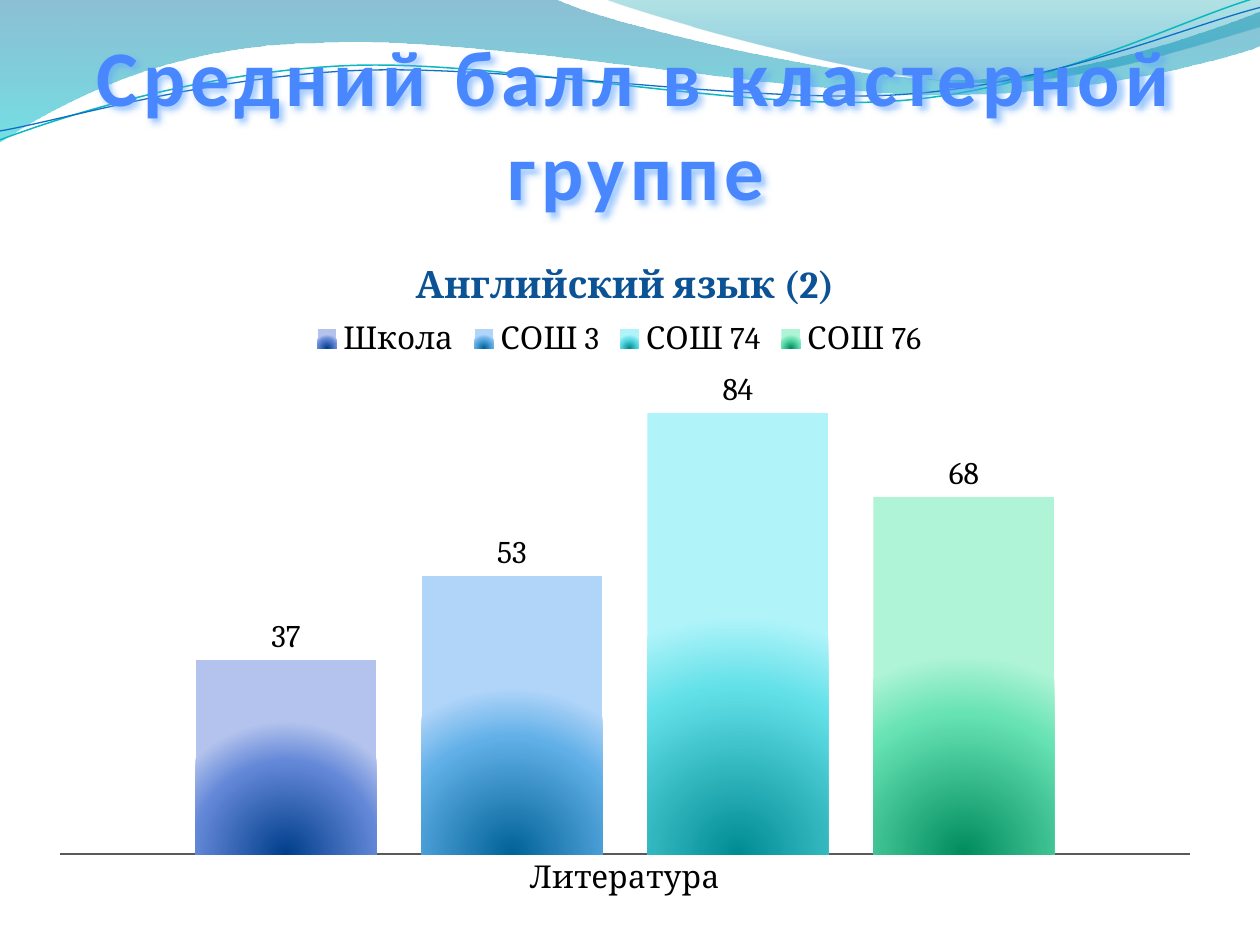
from dataclasses import dataclass
from math import cos, radians, sin
from typing import Optional

from lxml.etree import SubElement
from pptx import Presentation
from pptx.chart.data import CategoryChartData
from pptx.dml.color import RGBColor
from pptx.enum.chart import XL_CHART_TYPE, XL_LABEL_POSITION, XL_LEGEND_POSITION, XL_TICK_LABEL_POSITION, XL_TICK_MARK
from pptx.enum.text import MSO_ANCHOR, PP_ALIGN
from pptx.oxml import parse_xml
from pptx.oxml.ns import nsdecls, qn
from pptx.util import Inches, Pt

LINEAR_DOWN = '<a:lin ang="5400000" scaled="0"/>'
FROM_BOTTOM = '<a:path path="circle"><a:fillToRect l="50000" t="100000" r="50000"/></a:path>'
TILT = -2.7


@dataclass
class Wave:
    """Segments hold one point for a straight line, three for a Bezier curve."""
    start: tuple
    segments: list
    stops: Optional[list] = None
    line: Optional[tuple] = None
    pivot: Optional[tuple] = None


@dataclass
class School:
    name: str
    score: int
    shades: tuple


WAVES = [
    Wave((0, -0.01), [
        [(4.4, -0.01)],
        [(4.76, 0.17), (6.64, 0.63), (7.58, 0.63)],
        [(8.53, 0.63), (9.58, 0.26), (10, 0.09)],
        [(10.01, 0.36)],
        [(9.83, 0.44), (8.7, 0.76), (7.46, 0.75)],
        [(6.22, 0.75), (3.82, 0.28), (2.57, 0.34)],
        [(1.29, 0.35), (0.46, 0.83), (-0.01, 1.13)],
        [(0, -0.01)],
    ], stops=[(0, "0074A1", 45), (100, "00C6CF", 55)]),
    Wave((4.79, -0.01), [
        [(5.09, 0.11), (6.82, 0.62), (7.69, 0.65)],
        [(8.56, 0.69), (9.61, 0.32), (10, 0.21)],
        [(10, 0)],
        [(4.79, -0.01)],
    ], stops=[(0, "00A1A9", 30), (80, "008BBF", 45)]),
    Wave((0, 1.11), [
        [(0.48, 0.93), (1.58, 0.57), (2.77, 0.52)],
        [(3.95, 0.47), (5.93, 0.89), (7.13, 0.8)],
        [(8.33, 0.71), (9.38, 0.15), (9.98, -0.02)],
    ], line=("0AB8BF", 0.85), pivot=(4.99, 0.575)),
    Wave((0, 1.04), [
        [(0.47, 0.96), (1.64, 0.61), (2.83, 0.56)],
        [(4.03, 0.51), (5.97, 0.83), (7.17, 0.75)],
        [(8.36, 0.67), (9.41, 0.21), (10, 0.06)],
    ], line=("0F6FC6", 0.75), pivot=(5, 0.59)),
]

SCHOOLS = [
    School("Школа", 37, ("003E8B", "6488D8", "B3C3ED")),
    School("СОШ 3", 53, ("006297", "60AFE7", "B0D5F9")),
    School("СОШ 74", 84, ("008B93", "62E0E8", "B0F4FA")),
    School("СОШ 76", 68, ("008C5E", "66E2B3", "B0F4D7")),
]


def color(value: str) -> RGBColor:
    return RGBColor.from_string(value)


def gradient(stops: list, direction: str):
    """Make a gradient fill from (position, colour, opacity) stops in percent."""
    marks = "".join(
        f'<a:gs pos="{position * 1000}"><a:srgbClr val="{shade}">'
        f'<a:alpha val="{opacity * 1000}"/></a:srgbClr></a:gs>'
        for position, shade, opacity in stops)
    return parse_xml(f'<a:gradFill {nsdecls("a")} rotWithShape="1">'
                     f'<a:gsLst>{marks}</a:gsLst>{direction}</a:gradFill>')


def set_font(font, **values) -> None:
    font.color.rgb = color(values.pop("shade"))
    for name, value in values.items():
        setattr(font, name, value)


def level(point: tuple, pivot: tuple) -> tuple:
    """Turn a point back by the tilt, so the shape's rotation restores it."""
    angle = radians(-TILT)
    x, y = point[0] - pivot[0], point[1] - pivot[1]
    return (pivot[0] + x * cos(angle) - y * sin(angle),
            pivot[1] + x * sin(angle) + y * cos(angle))


def bend_segments(shape, segments: list) -> None:
    """Join the three line steps of each curved segment into one Bezier step."""
    steps = iter(list(shape._element.spPr.iter(qn("a:lnTo"))))
    for segment in segments:
        first, *others = [next(steps) for _ in segment]
        if others:
            curve = parse_xml(f'<a:cubicBezTo {nsdecls("a")}/>')
            first.addprevious(curve)
            for step in (first, *others):
                curve.append(step[0])
                step.getparent().remove(step)


def add_wave(slide, wave: Wave) -> None:
    points = [wave.start] + [point for segment in wave.segments for point in segment]
    if wave.pivot:
        points = [level(point, wave.pivot) for point in points]
    first, *rest = [(Inches(x), Inches(y)) for x, y in points]
    builder = slide.shapes.build_freeform(*first)
    builder.add_line_segments(rest, close=wave.line is None)
    shape = builder.convert_to_shape()
    bend_segments(shape, wave.segments)
    shape.shadow.inherit = False
    if wave.line:
        shape.rotation = TILT
        shape.fill.background()
        shape.line.color.rgb = color(wave.line[0])
        shape.line.width = Pt(wave.line[1])
    else:
        shape.line.fill.background()
        shape._element.spPr.find(qn("a:custGeom")).addnext(gradient(wave.stops, LINEAR_DOWN))


def add_title(slide) -> None:
    box = slide.shapes.add_textbox(Inches(0.55), Inches(0.47), Inches(9), Inches(1.25))
    box.shadow.inherit = False
    box._element.spPr.find(qn("a:effectLst")).append(parse_xml(
        f'<a:outerShdw {nsdecls("a")} blurRad="50800" dist="25400" dir="2700000" algn="tl">'
        '<a:srgbClr val="60A5FF"><a:alpha val="60000"/></a:srgbClr></a:outerShdw>'))
    frame = box.text_frame
    settings = {"word_wrap": True, "vertical_anchor": MSO_ANCHOR.BOTTOM, "margin_left": 0,
                "margin_right": 0, "margin_top": Inches(0.05), "margin_bottom": 0}
    for name, value in settings.items():
        setattr(frame, name, value)
    para = frame.paragraphs[0]
    para.alignment = PP_ALIGN.CENTER
    span = para.add_run()
    span.text = "Средний балл в кластерной группе"
    set_font(span.font, shade="4987FF", size=Pt(45), bold=True, name="Calibri")
    properties = span.font._element
    properties.set("spc", "300")
    solid = properties.find(qn("a:solidFill"))
    solid.addprevious(parse_xml(f'<a:ln {nsdecls("a")} w="11430"><a:solidFill>'
                                '<a:srgbClr val="F4F5FA"/></a:solidFill></a:ln>'))
    properties.replace(solid, gradient([(10, "4987FF", 100), (75, "00539E", 100)], LINEAR_DOWN))


def add_layout(parent, position: int, **values) -> None:
    """Place a chart part by fractions of the chart."""
    for old in parent.findall(qn("c:layout")):
        parent.remove(old)
    layout = parse_xml(f'<c:layout {nsdecls("c")}><c:manualLayout/></c:layout>')
    for name, value in values.items():
        SubElement(layout[0], qn(f"c:{name}")).set("val", str(value))
    parent.insert(position, layout)


def add_score_chart(slide) -> None:
    data = CategoryChartData()
    data.categories = ["Литература"]
    for school in SCHOOLS:
        data.add_series(school.name, [school.score])
    chart = slide.shapes.add_chart(XL_CHART_TYPE.COLUMN_CLUSTERED, Inches(0.29), Inches(1.85),
                                   Inches(9.34), Inches(5.36), data).chart
    set_font(chart.font, shade="000000", size=Pt(18), name="Cambria")

    chart.has_title = True
    span = chart.chart_title.text_frame.paragraphs[0].add_run()
    span.text = "Английский язык (2)"
    set_font(span.font, shade="0B5394", size=Pt(21.6), bold=True, name="Cambria")
    chart.chart_title.include_in_layout = False

    chart.has_legend = True
    chart.legend.position = XL_LEGEND_POSITION.TOP
    chart.legend.include_in_layout = False

    for name, value in {"visible": False, "has_major_gridlines": False,
                        "minimum_scale": 0, "maximum_scale": 90}.items():
        setattr(chart.value_axis, name, value)
    category_axis = chart.category_axis
    category_axis.major_tick_mark = XL_TICK_MARK.NONE
    category_axis.tick_label_position = XL_TICK_LABEL_POSITION.NEXT_TO_AXIS
    category_axis.format.line.color.rgb = color("595959")
    category_axis.format.line.width = Pt(1)

    plot = chart.plots[0]
    for name, value in {"gap_width": 150, "overlap": -25, "vary_by_categories": False}.items():
        setattr(plot, name, value)
    for series, school in zip(plot.series, SCHOOLS):
        stops = [(position, shade, 100) for position, shade in zip((0, 70, 100), school.shades)]
        series._element.get_or_add_spPr().insert(0, gradient(stops, FROM_BOTTOM))
        series.data_labels.show_value = True
        series.data_labels.position = XL_LABEL_POSITION.OUTSIDE_END

    parts = chart._chartSpace.chart
    edges = {"xMode": "edge", "yMode": "edge"}
    add_layout(parts.plotArea, 0, layoutTarget="inner", **edges, x=0.02, y=0.22, w=0.96, h=0.7)
    add_layout(chart.legend._element, 1, **edges, x=0.23, y=0.12)


def main() -> None:
    deck = Presentation()
    deck.slide_width, deck.slide_height = Inches(10), Inches(7.5)
    page = deck.slides.add_slide(deck.slide_layouts[6])
    for wave in WAVES:
        add_wave(page, wave)
    add_title(page)
    add_score_chart(page)
    deck.save("out.pptx")


if __name__ == "__main__":
    main()
